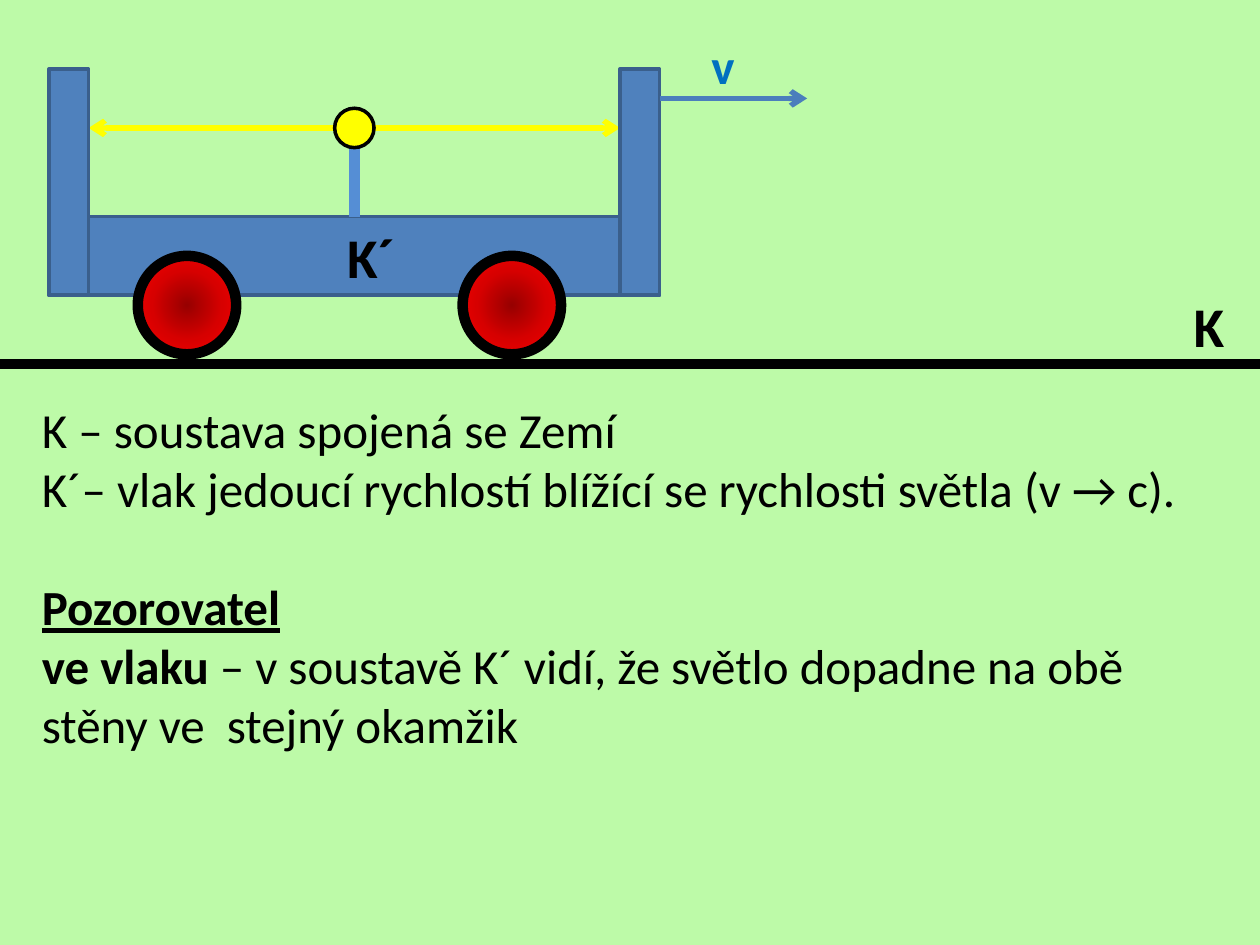
from dataclasses import dataclass

from lxml import etree
from pptx import Presentation
from pptx.dml.color import RGBColor
from pptx.enum.shapes import MSO_CONNECTOR, MSO_SHAPE
from pptx.oxml import parse_xml
from pptx.oxml.ns import nsdecls, qn
from pptx.util import Inches, Pt

RECT = MSO_SHAPE.RECTANGLE
OVAL = MSO_SHAPE.OVAL
LINE = MSO_CONNECTOR.STRAIGHT


@dataclass(frozen=True)
class Theme:
    font: str = "Calibri"
    page: str = "BDFAA8"
    ink: str = "000000"
    steel: str = "4F81BD"
    edge: str = "3A5F8C"
    post: str = "558ED5"
    arrow: str = "4B7EBC"
    speed: str = "0070C0"
    light: str = "FFFF00"
    tire: tuple = ((0, "970000"), (50, "D70000"), (100, "FF0000"))
    body: int = 28
    label: int = 32
    thin: int = 2
    ray: int = 3
    thick: int = 6


def write(para, text, font, size, color, bold=False, under=False):
    run = para.add_run()
    run.text = text
    face = run.font
    face.name = font
    face.size = Pt(size)
    face.bold = bold
    face.underline = under
    face.color.rgb = RGBColor.from_string(color)


def glow(stops):
    marks = "".join(
        f'<a:gs pos="{at * 1000}"><a:srgbClr val="{color}"/></a:gs>'
        for at, color in stops
    )
    return parse_xml(
        f'<a:gradFill {nsdecls("a")} rotWithShape="1"><a:gsLst>{marks}</a:gsLst>'
        '<a:path path="circle"><a:fillToRect l="50000" t="50000" r="50000" b="50000"/>'
        "</a:path></a:gradFill>"
    )


class Board:
    cols, rows = 64, 48

    def __init__(self, deck, theme):
        self.theme = theme
        self.wide, self.high = deck.slide_width, deck.slide_height
        self.slide = deck.slides.add_slide(deck.slide_layouts[6])
        self.shapes = self.slide.shapes
        fill = self.slide.background.fill
        fill.solid()
        fill.fore_color.rgb = RGBColor.from_string(theme.page)

    def place(self, *cells):
        units = (self.wide / self.cols, self.high / self.rows)
        return [round(cell * units[i % 2]) for i, cell in enumerate(cells)]

    def group(self):
        self.shapes = self.slide.shapes.add_group_shape().shapes

    def leave(self):
        self.shapes = self.slide.shapes

    def stroke(self, item, color, width):
        item.line.color.rgb = RGBColor.from_string(color)
        item.line.width = Pt(width)

    def shape(self, kind, cells, fill, edge, width):
        item = self.shapes.add_shape(kind, *self.place(*cells))
        item.shadow.inherit = False
        item.fill.solid()
        item.fill.fore_color.rgb = RGBColor.from_string(fill)
        self.stroke(item, edge, width)
        return item

    def wheel(self, left, top, size):
        look = self.theme
        item = self.shape(
            OVAL, (left, top, size, size), look.tire[0][1], look.ink, look.thick
        )
        props = item.element.spPr
        props.replace(props.find(qn("a:solidFill")), glow(look.tire))

    def line(self, cells, color, width, arrow=False):
        item = self.shapes.add_connector(LINE, *self.place(*cells))
        self.stroke(item, color, width)
        if arrow:
            etree.SubElement(item.line._get_or_add_ln(), qn("a:tailEnd"), type="arrow")
        etree.SubElement(item.element.spPr, qn("a:effectLst"))

    def text(self, cells, paras, size, color, wrap=True):
        frame = self.shapes.add_textbox(*self.place(*cells)).text_frame
        frame.word_wrap = wrap
        for i, (gap, runs) in enumerate(paras):
            para = frame.add_paragraph() if i else frame.paragraphs[0]
            para.space_before = Pt(gap)
            for words, style in runs:
                write(para, words, self.theme.font, size, color, **style)

    def label(self, cells, words, size, color):
        self.text(cells, [(0, [(words, {"bold": True})])], size, color, wrap=False)


def main():
    deck = Presentation()
    deck.slide_width, deck.slide_height = Inches(10), Inches(7.5)
    look = Theme()
    board = Board(deck, look)

    gap = look.body * 1.2
    board.text(
        (1.5, 20, 61, 26.5),
        [
            (0, [("K – soustava spojená se Zemí", {})]),
            (0, [("K´– vlak jedoucí rychlostí blížící se rychlosti světla (v → c).", {})]),
            (gap, [("Pozorovatel", {"bold": True, "under": True})]),
            (0, [
                ("ve vlaku ", {"bold": True}),
                ("– v soustavě K´ vidí, že světlo dopadne na obě stěny ve  stejný okamžik", {}),
            ]),
        ],
        look.body,
        look.ink,
    )
    board.line((0, 18.5, board.cols, 18.5), look.ink, look.thick)
    board.label((60, 14.5, 2.9, 4.1), "K", look.label, look.ink)

    for start, end in ((19, 31.5), (17, 4.5)):
        board.line((start, 6.5, end, 6.5), look.light, look.ray, arrow=True)

    board.group()
    for cells in ((2.5, 11, 31, 4), (2.5, 3.5, 2, 11.5), (31.5, 3.5, 2, 11.5)):
        board.shape(RECT, cells, look.steel, look.edge, look.thin)
    for left in (7, 23.5):
        board.wheel(left, 13, 5)
    board.line((18, 11, 18, 7.5), look.post, look.thick)
    board.shape(OVAL, (17, 5.5, 2, 2), look.light, look.ink, look.thin)
    board.label((17, 11, 3.85, 4.1), "K´", look.label, look.ink)
    board.leave()

    board.line((33.5, 5, 41, 5), look.arrow, look.ray, arrow=True)
    board.label((35.5, 1.5, 3.5, 3.65), "v", look.body, look.speed)
    deck.save("out.pptx")


if __name__ == "__main__":
    main()
